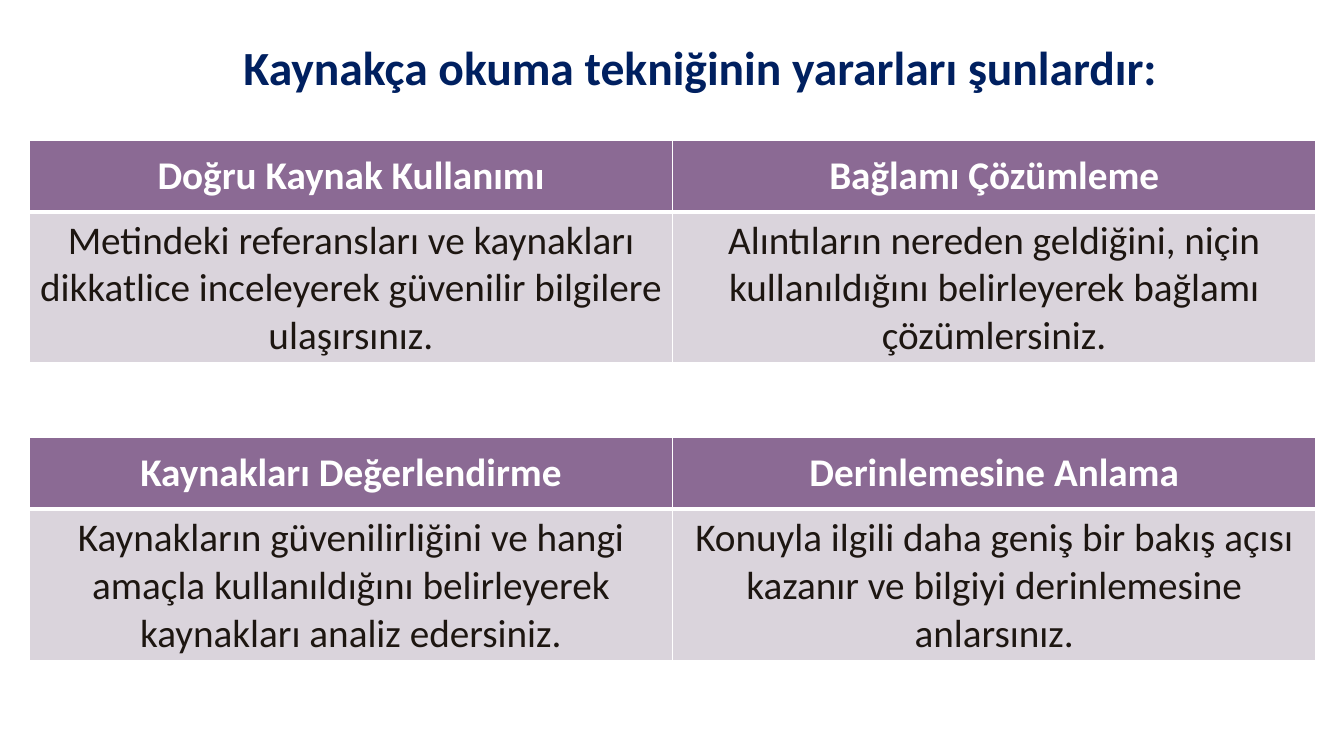
from lxml.etree import SubElement as Sub
from pptx import Presentation
from pptx.dml.color import RGBColor
from pptx.enum.text import MSO_ANCHOR as Anchor, PP_ALIGN as Align
from pptx.oxml.ns import qn
from pptx.util import Inches, Pt

TITLE = "Kaynakça okuma tekniğinin yararları şunlardır:"
TABLES = [
    [
        ("Doğru Kaynak Kullanımı", "Bağlamı Çözümleme"),
        ("Metindeki referansları ve kaynakları dikkatlice inceleyerek güvenilir bilgilere ulaşırsınız.",
         "Alıntıların nereden geldiğini, niçin kullanıldığını belirleyerek bağlamı çözümlersiniz."),
    ],
    [
        ("Kaynakları Değerlendirme", "Derinlemesine Anlama"),
        ("Kaynakların güvenilirliğini ve hangi amaçla kullanıldığını belirleyerek kaynakları analiz edersiniz.",
         "Konuyla ilgili daha geniş bir bakış açısı kazanır ve bilgiyi derinlemesine anlarsınız."),
    ],
]

NAVY = RGBColor(0x00, 0x20, 0x60)
WHITE = RGBColor(0xFF, 0xFF, 0xFF)
INK = RGBColor(0x1D, 0x16, 0x11)
PURPLE = RGBColor(0x8B, 0x6A, 0x94)
PALE = RGBColor(0xDA, 0xD4, 0xDC)

LEFT, TOP, WIDTH, STEP = 0.29, 1.39, 12.76, 2.95
HEIGHTS = (0.71, 1.5)
STYLES = [(PURPLE, WHITE, True), (PALE, INK, False)]
THIN, THICK = 1, 3


def write(frame, text, size, color, bold):
    par = frame.paragraphs[0]
    par.alignment = Align.CENTER
    run = par.add_run()
    run.text = text
    font = run.font
    font.name, font.size, font.bold = "Calibri", Pt(size), bold
    font.color.rgb = color
    return par


def border(cell, top, bottom):
    props = cell._tc.get_or_add_tcPr()
    for side, width in zip("LRTB", (THIN, THIN, top, bottom)):
        line = Sub(props, qn("a:ln" + side), w=str(Pt(width)))
        fill = Sub(line, qn("a:solidFill"))
        Sub(fill, qn("a:srgbClr"), val=str(WHITE))


def add_grid(slide, rows, top):
    frame = slide.shapes.add_table(len(rows), len(rows[0]), Inches(LEFT), Inches(top),
                                   Inches(WIDTH), Inches(sum(HEIGHTS)))
    table = frame.table
    for r, (texts, height, style) in enumerate(zip(rows, HEIGHTS, STYLES)):
        table.rows[r].height = Inches(height)
        back, color, bold = style
        edges = (THIN, THICK) if r == 0 else (THICK, THIN)
        for c, text in enumerate(texts):
            cell = table.cell(r, c)
            border(cell, *edges)
            cell.fill.solid()
            cell.fill.fore_color.rgb = back
            cell.vertical_anchor = Anchor.MIDDLE
            write(cell.text_frame, text, 28, color, bold)


def main():
    deck = Presentation()
    deck.slide_width, deck.slide_height = Inches(13.33), Inches(7.5)
    slide = deck.slides.add_slide(deck.slide_layouts[6])

    box = slide.shapes.add_textbox(Inches(1), Inches(0.36), Inches(11.89), Inches(0.65))
    frame = box.text_frame
    frame.word_wrap = True
    frame.vertical_anchor = Anchor.BOTTOM
    frame.margin_left = frame.margin_right = Inches(0.13)
    frame.margin_top = frame.margin_bottom = Inches(0.07)
    write(frame, TITLE, 34, NAVY, True).line_spacing = 0.85

    for i, rows in enumerate(TABLES):
        add_grid(slide, rows, TOP + i * STEP)

    deck.save("out.pptx")


if __name__ == "__main__":
    main()
